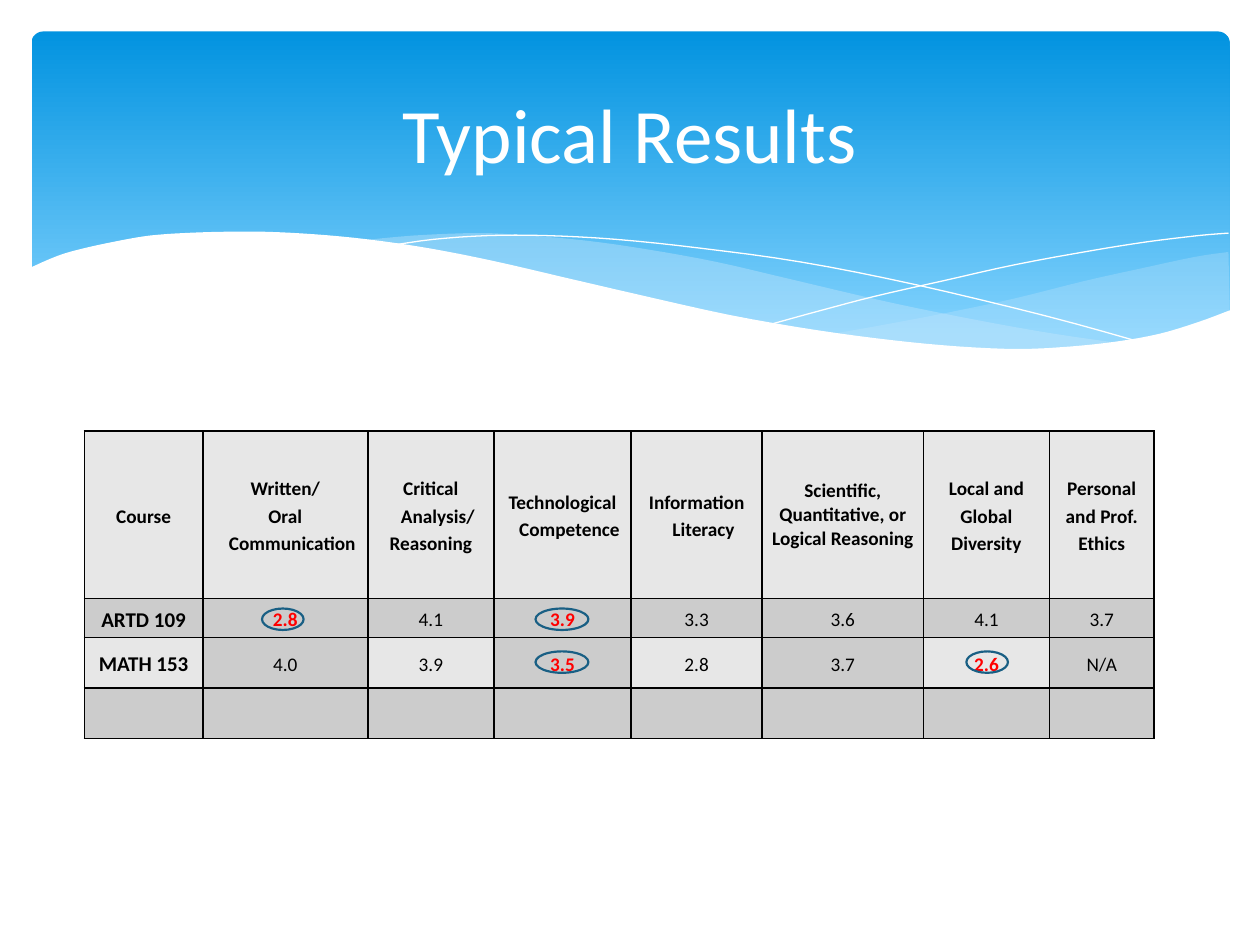
from lxml.etree import SubElement
from pptx import Presentation
from pptx.dml.color import RGBColor
from pptx.enum.shapes import MSO_SHAPE
from pptx.enum.text import MSO_ANCHOR, PP_ALIGN
from pptx.oxml.ns import qn
from pptx.util import Inches, Pt

COLORS = {"sky_top": "0293E0", "sky_bottom": "83D3FE", "wave": "C6E7FC",
          "white": "FFFFFF", "black": "000000", "red": "FF0000",
          "ring": "195F84", "light": "E7E7E7", "dark": "CCCCCC"}
FONT = "Calibri"

RIGHT_WAVE = [
    [(9.75, 2), (9.48, 2.04), (9.06, 2.13), (8.61, 2.23), (8.05, 2.37),
     (7.53, 2.48), (7.06, 2.57), (6.61, 2.65)],
    [(6.61, 2.65), (7.05, 2.71), (7.57, 2.76), (8.03, 2.78), (8.44, 2.77),
     (8.81, 2.73), (9.21, 2.65), (9.49, 2.57), (9.76, 2.47)]]
MIDDLE_WAVE = [
    [(8.93, 2.73), (8.37, 2.65), (7.75, 2.54), (7.06, 2.4), (6.29, 2.22),
     (5.69, 2.08), (5.14, 1.98), (4.65, 1.91), (4.2, 1.87), (3.8, 1.85),
     (3.28, 1.87), (2.86, 1.91)],
    [(2.86, 1.91), (3.42, 1.99), (4.04, 2.11), (4.49, 2.22), (5.3, 2.4),
     (6.01, 2.55), (6.65, 2.66), (7.22, 2.74), (7.73, 2.77), (8.18, 2.78),
     (8.57, 2.77), (8.93, 2.73)]]
FALLING_LINE = [
    [(3.09, 1.95), (3.44, 1.9), (3.87, 1.87), (4.33, 1.87), (4.89, 1.9),
     (5.56, 1.97), (6.36, 2.08), (7.27, 2.26), (8.31, 2.51), (9.07, 2.72)]]
RISING_LINE = [
    [(6.13, 2.57), (6.53, 2.46), (6.95, 2.35), (7.48, 2.23), (8.06, 2.1),
     (8.66, 1.99), (9.1, 1.92), (9.51, 1.87), (9.75, 1.85)]]
WHITE_WAVE = [
    [(9.77, 2.46), (9.5, 2.56), (9.2, 2.65), (8.87, 2.71), (8.5, 2.75),
     (8.09, 2.77), (7.61, 2.75), (7.08, 2.7), (6.48, 2.62), (5.79, 2.5),
     (5.03, 2.33), (4.47, 2.2), (3.91, 2.07), (3.4, 1.97), (2.92, 1.9),
     (2.5, 1.86), (2.11, 1.84), (1.77, 1.84), (1.46, 1.85), (1.19, 1.87),
     (0.95, 1.91), (0.67, 1.97), (0.46, 2.03), (0.23, 2.13)],
    [(0.23, 3.29), (9.77, 3.29)]]

COLUMN_WIDTHS = [0.94, 1.31, 1, 1.09, 1.04, 1.28, 1, 0.83]
ROW_HEIGHTS = [1.33, 0.31, 0.4, 0.4]
ROWS = [
    ["Course", "Written/\nOral Communication", "Critical Analysis/\nReasoning",
     "Technological Competence", "Information Literacy",
     "Scientific, Quantitative, or Logical Reasoning",
     "Local and Global Diversity", "Personal and Prof. Ethics"],
    ["ARTD 109", "2.8", "4.1", "3.9", "3.3", "3.6", "4.1", "3.7"],
    ["MATH 153", "4.0", "3.9", "3.5", "2.8", "3.7", "2.6", "N/A"],
    [""] * len(COLUMN_WIDTHS)]
RINGS = {(1, 1): (2.08, 4.83, 0.33), (1, 3): (4.25, 4.83, 0.42),
         (2, 3): (4.25, 5.17, 0.42), (2, 6): (7.67, 5.17, 0.33)}


def color(name):
    """Return the named colour."""
    return RGBColor.from_string(COLORS[name])


def smooth(points, steps=4):
    """Return points along a Catmull-Rom curve through the given points."""
    padded = [points[0], *points, points[-1]]
    curve = [points[0]]
    for a, b, c, d in zip(padded, padded[1:], padded[2:], padded[3:]):
        for step in range(1, steps + 1):
            t = step / steps
            curve.append(tuple(
                (2 * q + (r - p) * t + (2 * p - 5 * q + 4 * r - s) * t ** 2
                 + (3 * q - p - 3 * r + s) * t ** 3) / 2
                for p, q, r, s in zip(a, b, c, d)))
    return curve


def add_wave(slide, edges, fill=None, opacity=100, line=None):
    """Draw a curved outline, filled when a fill colour is given."""
    points = [(Inches(x), Inches(y)) for edge in edges for x, y in smooth(edge)]
    builder = slide.shapes.build_freeform(*points[0])
    builder.add_line_segments(points[1:], close=fill is not None)
    shape = builder.convert_to_shape()
    shape.shadow.inherit = False
    if fill:
        shape.fill.solid()
        shape.fill.fore_color.rgb = color(fill)
        fill_color = shape.fill._xPr.find(qn("a:solidFill"))[0]
        SubElement(fill_color, qn("a:alpha"), val=str(opacity * 1000))
    else:
        shape.fill.background()
    if line:
        shape.line.color.rgb = color(line)
        shape.line.width = Pt(0)
    else:
        shape.line.fill.background()


def add_banner(slide):
    """Draw the rounded gradient banner and its waves."""
    banner = slide.shapes.add_shape(
        MSO_SHAPE.ROUNDED_RECTANGLE,
        Inches(0.25), Inches(0.25), Inches(9.51), Inches(2.7))
    banner.adjustments[0] = 0.034
    banner.shadow.inherit = False
    banner.line.fill.background()
    banner.fill.gradient()
    banner.fill.gradient_angle = 270
    stops = [(0, "sky_top"), (0.9, "sky_bottom")]
    for stop, (position, name) in zip(banner.fill.gradient_stops, stops):
        stop.position = position
        stop.color.rgb = color(name)
    add_wave(slide, RIGHT_WAVE, fill="wave", opacity=29)
    add_wave(slide, MIDDLE_WAVE, fill="wave", opacity=40)
    add_wave(slide, FALLING_LINE, line="white")
    add_wave(slide, RISING_LINE, line="white")
    add_wave(slide, WHITE_WAVE, fill="white")


def format_text(frame, text, size, font_color="black", bold=False,
                spacing=1.0, hanging=0):
    """Fill a text frame with centred, formatted paragraphs."""
    frame.text = text
    for paragraph in frame.paragraphs:
        paragraph.alignment = PP_ALIGN.CENTER
        paragraph.line_spacing = spacing
        font = paragraph.font
        if paragraph.runs:
            font = paragraph.runs[0].font
        font.name = FONT
        font.size = Pt(size)
        font.bold = bold
        font.color.rgb = color(font_color)
        if hanging:
            properties = paragraph._p.get_or_add_pPr()
            properties.set("marL", str(Inches(hanging)))
            properties.set("indent", str(-Inches(hanging)))


def add_title(slide, text):
    """Place the title in front of the banner."""
    title = slide.shapes.title
    title.left, title.top = Inches(0.5), Inches(0.37)
    title.width, title.height = Inches(9), Inches(1.37)
    title.text_frame.vertical_anchor = MSO_ANCHOR.MIDDLE
    format_text(title.text_frame, text, 44, font_color="white")
    title.element.getparent().append(title.element)


def format_cell(cell, fill):
    """Set the borders, fill, margins and anchor of a cell."""
    properties = cell._tc.get_or_add_tcPr()
    for side in ("lnL", "lnR", "lnT", "lnB"):
        border = SubElement(properties, qn(f"a:{side}"), w=str(Pt(1)))
        solid = SubElement(border, qn("a:solidFill"))
        SubElement(solid, qn("a:srgbClr"), val=COLORS["black"])
    cell.fill.solid()
    cell.fill.fore_color.rgb = color(fill)
    cell.margin_left = cell.margin_right = Inches(0.06)
    cell.margin_top = cell.margin_bottom = 0
    cell.vertical_anchor = MSO_ANCHOR.MIDDLE


def add_results_table(slide):
    """Add the table of course scores, with ringed scores in red."""
    table = slide.shapes.add_table(
        len(ROWS), len(COLUMN_WIDTHS), Inches(0.67), Inches(3.42),
        Inches(sum(COLUMN_WIDTHS)), Inches(sum(ROW_HEIGHTS))).table
    table.first_row = table.horz_banding = False
    for column, width in zip(table.columns, COLUMN_WIDTHS):
        column.width = Inches(width)
    for row, height in zip(table.rows, ROW_HEIGHTS):
        row.height = Inches(height)
    for i, row in enumerate(ROWS):
        for j, text in enumerate(row):
            light = i == 0 or (i == 2 and j % 2 == 0)
            ringed = (i, j) in RINGS
            cell = table.cell(i, j)
            format_cell(cell, "light" if light else "dark")
            format_text(
                cell.text_frame, text, 12 if i and j == 0 else 11,
                font_color="red" if ringed else "black",
                bold=i == 0 or j == 0 or ringed,
                spacing=1.0 if (i, j) == (0, 5) else 1.15,
                hanging=0 if i == 0 and j >= 5 else 0.11)


def add_ring(slide, left, top, width):
    """Draw an open ellipse around a score."""
    ring = slide.shapes.add_shape(MSO_SHAPE.OVAL, Inches(left), Inches(top),
                                  Inches(width), Inches(0.17))
    ring.shadow.inherit = False
    ring.fill.background()
    ring.line.color.rgb = color("ring")
    ring.line.width = Pt(1.25)


def main():
    """Build and save the presentation."""
    presentation = Presentation()
    presentation.slide_width = Inches(10)
    presentation.slide_height = Inches(7.5)
    slide = presentation.slides.add_slide(presentation.slide_layouts[5])
    add_banner(slide)
    add_results_table(slide)
    add_title(slide, "Typical Results")
    for ring in RINGS.values():
        add_ring(slide, *ring)
    presentation.save("out.pptx")


if __name__ == "__main__":
    main()
